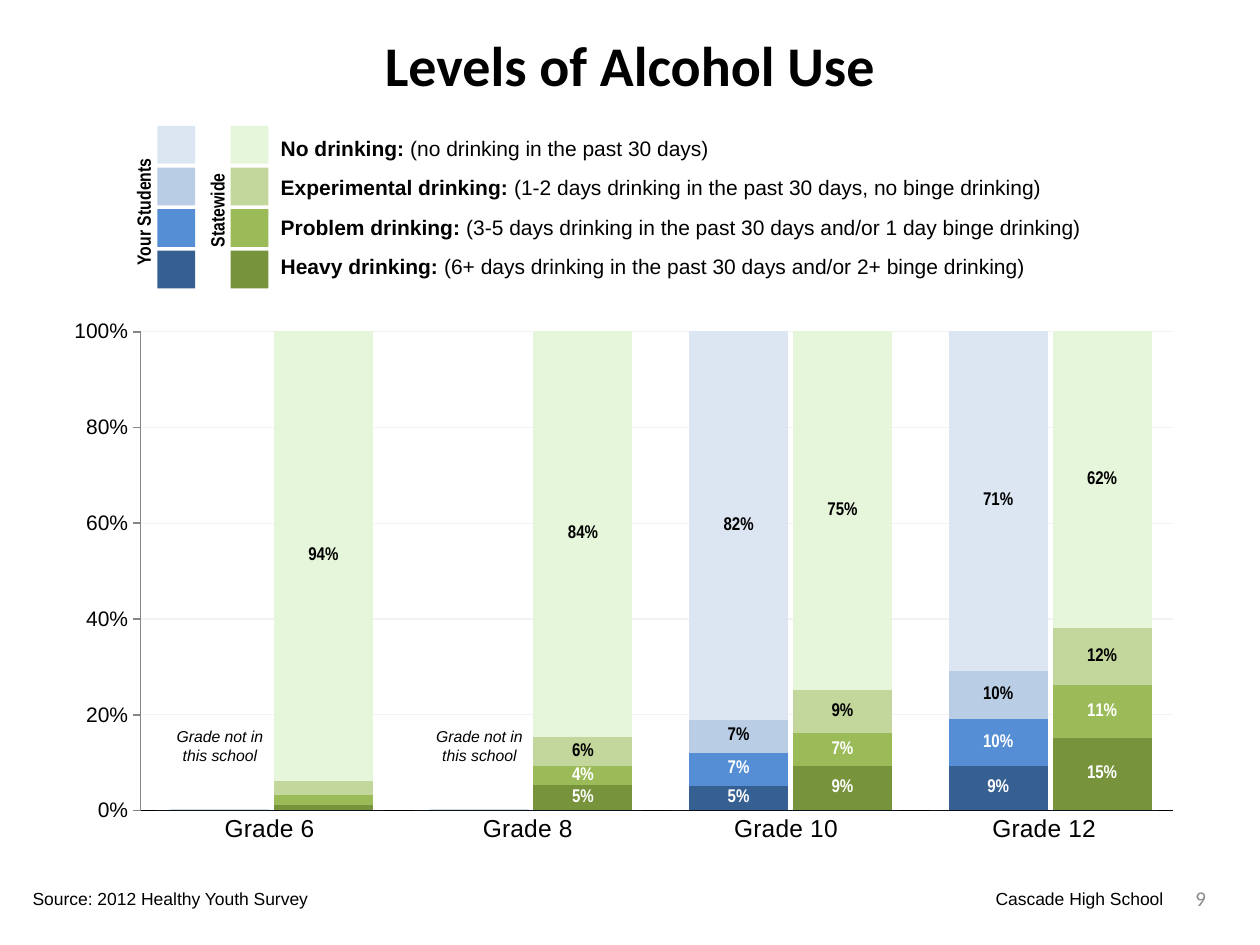
"""Build a slide comparing levels of alcohol use by grade, school against state."""
from pptx import Presentation
from pptx.chart.data import CategoryChartData
from pptx.dml.color import RGBColor
from pptx.enum.chart import XL_CHART_TYPE, XL_TICK_LABEL_POSITION, XL_TICK_MARK
from pptx.enum.shapes import MSO_SHAPE
from pptx.enum.text import MSO_ANCHOR, PP_ALIGN
from pptx.oxml import parse_xml
from pptx.oxml.ns import nsdecls, qn
from pptx.util import Inches, Pt

BLACK = RGBColor(0, 0, 0)
WHITE = RGBColor(255, 255, 255)
GRAY = RGBColor(0x8C, 0x8C, 0x8C)
AXIS = RGBColor(0x86, 0x86, 0x86)
GRID = RGBColor(0xF2, 0xF2, 0xF2)
BLUES = [RGBColor.from_string(c) for c in ("DCE6F2", "B9CDE5", "558ED5", "376092")]
GREENS = [RGBColor.from_string(c) for c in ("E6F6DA", "C3D69B", "9BBB59", "77933C")]

LEVELS = [
    ("No drinking: ", "(no drinking in the past 30 days)"),
    ("Experimental drinking: ", "(1-2 days drinking in the past 30 days, no binge drinking)"),
    ("Problem drinking: ", "(3-5 days drinking in the past 30 days and/or 1 day binge drinking)"),
    ("Heavy drinking: ", "(6+ days drinking in the past 30 days and/or 2+ binge drinking)"),
]
ABSENT = (0, 0, 0, 0)
GRADES = [
    ("Grade 6", (0.01, 0.02, 0.03, 0.94), ABSENT),
    ("Grade 8", (0.05, 0.04, 0.06, 0.84), ABSENT),
    ("Grade 10", (0.09, 0.07, 0.09, 0.75), (0.05, 0.07, 0.07, 0.82)),
    ("Grade 12", (0.15, 0.11, 0.12, 0.62), (0.09, 0.10, 0.10, 0.71)),
]
KEYS = [
    (1.25, BLUES, "Your Students", (0.61, 1.53, 1.06, 0.29)),
    (1.83, GREENS, "Statewide", (1.33, 1.52, 0.79, 0.29)),
]
KEY_TOP, KEY_STEP, KEY_SIZE = 1, 0.33, 0.3
TEXT_TOP, TEXT_STEP = 1.03, 0.31
GRADE_LEFT, GRADE_STEP = 1.33, 2.06


def add_text(slide, box, runs, size, font="Arial", color=BLACK, align=PP_ALIGN.LEFT,
             anchor=MSO_ANCHOR.TOP, wrap=False, italic=False):
    """Add one paragraph made of (text, bold) runs."""
    sp = slide.shapes.add_textbox(*map(Inches, box))
    tf = sp.text_frame
    tf.word_wrap, tf.vertical_anchor = wrap, anchor
    p = tf.paragraphs[0]
    p.alignment = align
    for text, bold in runs:
        r = p.add_run()
        r.text = text
        r.font.size, r.font.name = Pt(size), font
        r.font.bold, r.font.italic = bold, italic
        r.font.color.rgb = color
    return sp


def add_chart(slide, box, categories, series, plot_box, gap):
    """Add a transparent 100% stacked column chart with a fixed plot area."""
    data = CategoryChartData(number_format="0%")
    data.categories = categories
    for i, values in enumerate(series, 1):
        data.add_series(f"Series {i}", values)
    chart = slide.shapes.add_chart(
        XL_CHART_TYPE.COLUMN_STACKED_100, *map(Inches, box), data).chart
    chart.has_legend = chart.has_title = False
    chart.font.size, chart.font.name, chart.font.color.rgb = Pt(10), "Calibri", BLACK
    plot = chart.plots[0]
    plot.gap_width, plot.overlap, plot.vary_by_categories = gap, 100, False
    axis = chart.value_axis
    axis.minimum_scale, axis.maximum_scale, axis.major_unit = 0, 1, 0.2
    chart.category_axis.major_tick_mark = XL_TICK_MARK.NONE

    area = chart._chartSpace.chart.plotArea
    for old in area.findall(qn("c:layout")):
        area.remove(old)
    sizes = "".join(f'<c:{k} val="{v}"/>' for k, v in zip("xywh", plot_box))
    area.insert(0, parse_xml(
        f'<c:layout {nsdecls("c")}><c:manualLayout><c:layoutTarget val="inner"/>'
        f'<c:xMode val="edge"/><c:yMode val="edge"/>{sizes}</c:manualLayout></c:layout>'))
    clear = (f'<c:spPr {nsdecls("c", "a")}><a:noFill/>'
             '<a:ln><a:noFill/></a:ln></c:spPr>')
    area.append(parse_xml(clear))
    chart._chartSpace.chart.addnext(parse_xml(clear))
    return chart


def add_frame(slide):
    """Add the shared axes behind the columns."""
    chart = add_chart(slide, (0.59, 2.5, 8.74, 4.3), [g[0] for g in GRADES],
                      [ABSENT], (0.06, 0.031, 0.938, 0.884), 13)
    cat, val = chart.category_axis, chart.value_axis
    for axis, size, color in ((cat, 14, BLACK), (val, 12, AXIS)):
        font = axis.tick_labels.font
        font.size, font.name, font.color.rgb = Pt(size), "Arial", BLACK
        axis.format.line.color.rgb, axis.format.line.width = color, Pt(1)
    val.major_tick_mark = XL_TICK_MARK.OUTSIDE
    val.tick_labels.number_format, val.tick_labels.number_format_is_linked = "0%", False
    grid = val.major_gridlines.format.line
    grid.color.rgb, grid.width = GRID, Pt(0.75)


def add_columns(slide, left, state, school):
    """Add the school and state columns of one grade."""
    chart = add_chart(slide, (left, 2.55, 1.65, 4.05), ["1", "2"],
                      list(zip(state, school)), (0, 0.02, 1, 0.937), 5)
    chart.category_axis.reverse_order = True
    chart.value_axis.has_major_gridlines = False
    for axis in (chart.category_axis, chart.value_axis):
        axis.tick_label_position = XL_TICK_LABEL_POSITION.NONE
        axis.major_tick_mark = XL_TICK_MARK.NONE
        axis.format.line.fill.background()
    shades = zip(reversed(GREENS), reversed(BLUES))
    for i, (series, pair) in enumerate(zip(chart.plots[0].series, shades)):
        for j, color in enumerate(pair):
            fill = series.points[j].format.fill
            fill.solid()
            fill.fore_color.rgb = color
        labels = series.data_labels
        labels.show_value = True
        labels.number_format, labels.number_format_is_linked = '[<0.04]" ";0%', False
        font = labels.font
        font.size, font.name, font.bold = Pt(10.5), "Arial Narrow", True
        font.color.rgb = WHITE if i < 2 else BLACK


def add_key(slide):
    """Add the two colour scales and the level descriptions."""
    for left, colors, name, box in KEYS:
        for i, color in enumerate(colors):
            sp = slide.shapes.add_shape(
                MSO_SHAPE.RECTANGLE, Inches(left), Inches(KEY_TOP + i * KEY_STEP),
                Inches(KEY_SIZE), Inches(KEY_SIZE))
            sp.shadow.inherit = False
            sp.fill.solid()
            sp.fill.fore_color.rgb = color
            sp.line.fill.background()
        add_text(slide, box, [(name, True)], 11, "Arial Narrow").rotation = 270
    for i, (name, meaning) in enumerate(LEVELS):
        add_text(slide, (2.13, TEXT_TOP + i * TEXT_STEP, 6.6, 0.3),
                 [(name, True), (meaning, False)], 12)


def main():
    prs = Presentation()
    prs.slide_width, prs.slide_height = Inches(10), Inches(7.5)
    slide = prs.slides.add_slide(prs.slide_layouts[6])
    add_text(slide, (0.25, 0.17, 9.5, 0.67), [("Levels of Alcohol Use", True)], 32,
             "Calibri", align=PP_ALIGN.CENTER, anchor=MSO_ANCHOR.MIDDLE, wrap=True)
    add_key(slide)
    add_frame(slide)
    for i, (_, state, school) in enumerate(GRADES):
        left = GRADE_LEFT + i * GRADE_STEP
        add_columns(slide, left, state, school)
        if school == ABSENT:
            tf = add_text(slide, (left + 0.04, 4.67, 0.75, 1.5),
                          [("Grade not in this school", False)], 9, align=PP_ALIGN.CENTER,
                          anchor=MSO_ANCHOR.BOTTOM, wrap=True, italic=True).text_frame
            tf.margin_left = tf.margin_right = tf.margin_top = 0
            tf.margin_bottom = Inches(0.1)
    add_text(slide, (0.16, 7, 2.42, 0.27), [("Source: 2012 Healthy Youth Survey", False)], 10)
    add_text(slide, (3.25, 7, 6.08, 0.27), [("Cascade High School", False)], 10,
             align=PP_ALIGN.RIGHT, wrap=True)
    add_text(slide, (9.17, 6.93, 0.5, 0.4), [("9", False)], 12, "Calibri", GRAY,
             PP_ALIGN.RIGHT, MSO_ANCHOR.MIDDLE, True)
    prs.save("out.pptx")


if __name__ == "__main__":
    main()
